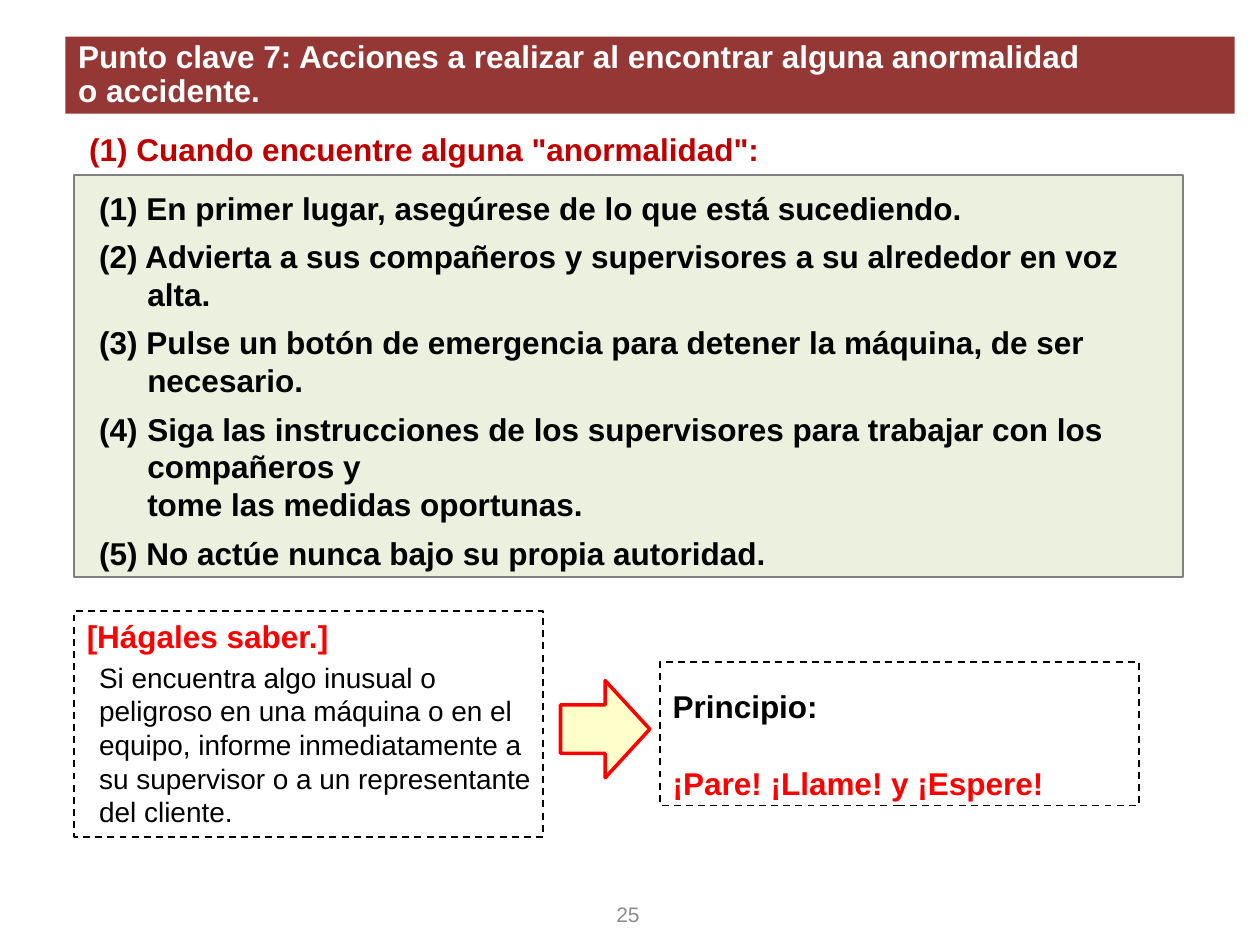
"""Builds the slide on what to do when an abnormality or accident is found."""
from lxml.etree import SubElement
from pptx import Presentation
from pptx.dml.color import RGBColor
from pptx.enum.dml import MSO_LINE
from pptx.enum.shapes import MSO_SHAPE as SHAPE
from pptx.enum.text import MSO_ANCHOR as ANCHOR, MSO_AUTO_SIZE as AUTO, PP_ALIGN as ALIGN
from pptx.oxml.ns import qn
from pptx.util import Cm, Pt

COLORS = {"white": "FFFFFF", "black": "000000", "banner": "953735", "heading": "C00000",
          "red": "FF0000", "panel": "EBF1DE", "gray": "808080", "cream": "FFFFCC",
          "number": "8C8C8C"}

TITLE = ["Punto clave 7: Acciones a realizar al encontrar alguna anormalidad", "o accidente."]
HEADING = '(1) Cuando encuentre alguna "anormalidad":'
STEPS = [
    "(1) En primer lugar, asegúrese de lo que está sucediendo.",
    "(2) Advierta a sus compañeros y supervisores a su alrededor en voz alta.",
    "(3) Pulse un botón de emergencia para detener la máquina, de ser necesario.",
    "(4)\tSiga las instrucciones de los supervisores para trabajar con los compañeros y \v"
    "tome las medidas oportunas.",
    "(5) No actúe nunca bajo su propia autoridad.",
]
NOTICE = ("[Hágales saber.]",
          "Si encuentra algo inusual o peligroso en una máquina o en el equipo, informe "
          "inmediatamente a su supervisor o a un representante del cliente.")
PRINCIPLE = ("Principio:", "¡Pare! ¡Llame! y ¡Espere!")
PAGE = "25"

LEFT = 1.5
BOXES = {
    "title": (1.32, 0.74, 23.57, 1.55),
    "heading": (1.55, 2.49, 15.75, 1.02),
    "steps": (LEFT, 3.53, 22.35, 8.1),
    "notice": (LEFT, 12.32, 9.45, 4.55),
    "principle": (13.31, 13.34, 9.65, 2.9),
    "arrow": (11.3, 13.72, 1.8, 1.96),
    "page": (9.7, 17.91, 5.92, 1.02),
}


def rgb(name):
    return RGBColor.from_string(COLORS[name])


def cm_box(name):
    return [Cm(v) for v in BOXES[name]]


def set_all(obj, values):
    for name, value in values.items():
        setattr(obj, name, value)


def write(sp, texts, color="black", size=18, bold=True, indent=None, start=0, anchor=ANCHOR.TOP,
          **paragraph):
    """Write paragraphs into a shape, from paragraph number start on."""
    tf = sp.text_frame
    set_all(tf, {"word_wrap": True, "auto_size": AUTO.NONE, "vertical_anchor": anchor})
    for i, text in enumerate(texts, start):
        p = tf.add_paragraph() if i else tf.paragraphs[0]
        p.text = text
        set_all(p, {"alignment": ALIGN.LEFT, **paragraph})
        if indent:
            pPr = p._p.get_or_add_pPr()
            for key, value in zip(("marL", "indent"), indent):
                pPr.set(key, str(Cm(value)))
        for r in p.runs:
            set_all(r.font, {"name": "Arial", "size": Pt(size), "bold": bold})
            r.font.color.rgb = rgb(color)


def add_box(s, name, kind=SHAPE.RECTANGLE, fill=None, line="black", width=1, dash=None):
    sp = s.shapes.add_shape(kind, *cm_box(name))
    sp.shadow.inherit = False
    if fill:
        sp.fill.solid()
        sp.fill.fore_color.rgb = rgb(fill)
    else:
        sp.fill.background()
    sp.line.color.rgb = rgb(line)
    set_all(sp.line, {"width": Pt(width), "dash_style": dash})
    return sp


def add_title(s):
    sp = s.shapes.title
    set_all(sp, dict(zip(("left", "top", "width", "height"), cm_box("title"))))
    geom = SubElement(sp._element.spPr, qn("a:prstGeom"), prst="roundRect")
    SubElement(geom, qn("a:avLst"))
    sp.fill.solid()
    sp.fill.fore_color.rgb = rgb("banner")
    write(sp, TITLE, "white", anchor=ANCHOR.MIDDLE, line_spacing=0.9, space_before=Pt(0))


def main():
    prs = Presentation()
    set_all(prs, {"slide_width": Cm(25.4), "slide_height": Cm(19.05)})
    s = prs.slides.add_slide(prs.slide_layouts[5])
    add_title(s)

    write(s.shapes.add_textbox(*cm_box("heading")), [HEADING], "heading")

    steps = add_box(s, "steps", fill="panel", line="gray")
    set_all(steps.text_frame, {"margin_left": Cm(0.25), "margin_top": Cm(0.3),
                               "margin_right": Cm(0.2), "margin_bottom": Cm(0.13)})
    write(steps, STEPS, indent=(1.22, -0.97), anchor=ANCHOR.MIDDLE, space_before=Pt(6))

    notice = add_box(s, "notice", dash=MSO_LINE.DASH)
    write(notice, NOTICE[:1], "red", space_before=Pt(12))
    write(notice, NOTICE[1:], size=16, bold=False, indent=(0.25, 0), start=1, space_before=Pt(3))

    principle = add_box(s, "principle", dash=MSO_LINE.DASH)
    for i, color in enumerate(("black", "red")):
        write(principle, [PRINCIPLE[i]], color, start=i, alignment=ALIGN.JUSTIFY,
              line_spacing=1.5, space_before=Pt(12))

    add_box(s, "arrow", SHAPE.RIGHT_ARROW, "cream", "red", 2)
    write(s.shapes.add_textbox(*cm_box("page")), [PAGE], "number", 12, False,
          anchor=ANCHOR.MIDDLE, alignment=ALIGN.CENTER)
    prs.save("out.pptx")


if __name__ == "__main__":
    main()
